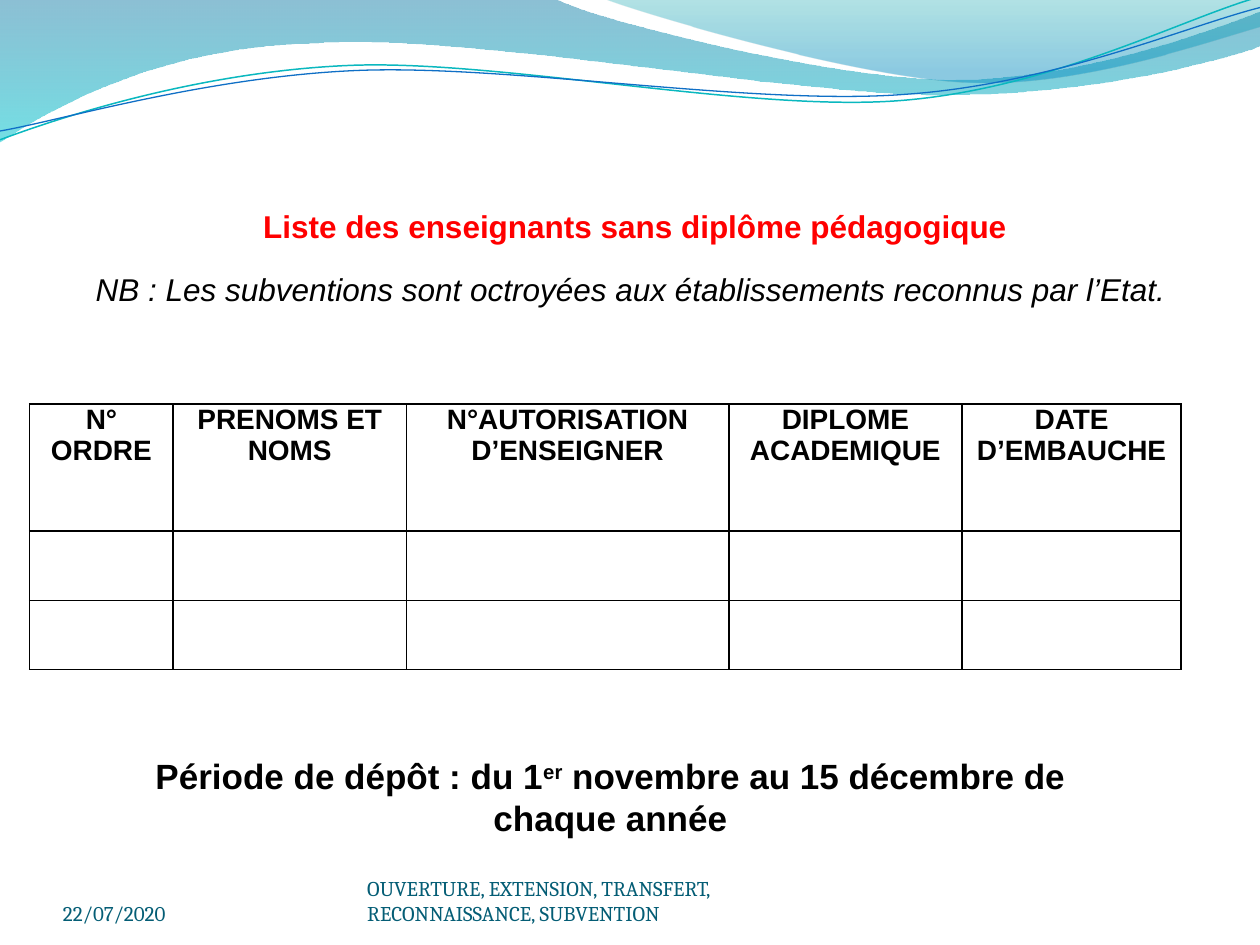
from lxml.etree import SubElement
from pptx import Presentation
from pptx.dml.color import RGBColor as RGB
from pptx.enum.text import MSO_ANCHOR as Anchor, MSO_AUTO_SIZE as AutoSize, PP_ALIGN as Align
from pptx.oxml import parse_xml
from pptx.oxml.ns import nsdecls, qn
from pptx.util import Inches, Pt

COLORS = {
    "text": "000000", "title": "FF0000", "footer": "045D75",
    "deep": "0074A1", "aqua": "00C6CF", "teal": "00A1A9", "sky": "008BBF",
    "teal line": "0AB8BF", "blue line": "0F6FC6",
}

deck = Presentation()
deck.slide_width, deck.slide_height = Inches(10), Inches(7.5)
# The grid has 100 columns and 75 rows of equal size
UNIT = deck.slide_width // 100
page = deck.slides.add_slide(deck.slide_layouts[5])
shapes = page.shapes


def grid(*lengths):
    return [round(length * UNIT) for length in lengths]


def style(para, size, color, font="Arial", bold=False, italic=False):
    for span in para.runs:
        span.font.name, span.font.size = font, Pt(size)
        span.font.bold, span.font.italic = bold, italic
        span.font.color.rgb = RGB.from_string(COLORS[color])


# Header waves: six numbers make a Bezier curve, two make a straight line
waves = [
    {"start": (0, 0), "stops": [(0, "deep", 45), (1, "aqua", 55)], "steps": [
        (44, -0.1), (47.6, 1.7, 66.4, 6.3, 75.8, 6.3), (85.3, 6.3, 95.8, 2.6, 100, 0.9),
        (100.1, 3.6), (98.3, 4.4, 87, 7.6, 74.6, 7.5), (62.2, 7.5, 38.2, 2.8, 25.7, 3.4),
        (12.9, 3.6, 4.6, 8.3, -0.1, 11.3)]},
    {"start": (47.9, -0.1), "stops": [(0, "teal", 30), (0.8, "sky", 45)], "steps": [
        (50.9, 1.1, 68.2, 6.2, 76.9, 6.5), (85.6, 6.9, 96.1, 3.2, 100, 2.1), (100, 0)]},
    {"start": (0, 11.1), "line": ("teal line", 0.85), "steps": [
        (4.8, 9.3, 15.8, 5.7, 27.7, 5.2), (39.5, 4.7, 59.3, 8.9, 71.3, 8),
        (83.3, 7.1, 93.8, 1.5, 99.8, -0.2)]},
    {"start": (0, 10.4), "line": ("blue line", 0.75), "steps": [
        (4.7, 9.6, 16.4, 6.1, 28.3, 5.6), (40.3, 5.1, 59.7, 8.4, 71.7, 7.5),
        (83.6, 6.7, 94.1, 2.1, 100, 0.6)]},
]
for wave in waves:
    points = [grid(*step[i:i + 2]) for step in wave["steps"] for i in range(0, len(step), 2)]
    outline = shapes.build_freeform(*grid(*wave["start"]))
    outline.add_line_segments(points, close="stops" in wave)
    shape = outline.convert_to_shape()
    shape.shadow.inherit = False
    # Join each run of three points into one curve
    segments = iter(list(shape._element.spPr.iter(qn("a:lnTo"))))
    for step in wave["steps"]:
        first = next(segments)
        if len(step) == 6:
            first.tag = qn("a:cubicBezTo")
            for extra in (next(segments), next(segments)):
                first.append(extra[0])
                extra.getparent().remove(extra)
    if "line" in wave:
        color, width = wave["line"]
        shape.fill.background()
        shape.line.color.rgb, shape.line.width = RGB.from_string(COLORS[color]), Pt(width)
        continue
    shape.line.fill.background()
    shape.fill.gradient()
    shape.fill.gradient_angle = 270
    for stop, (position, color, opacity) in zip(shape.fill.gradient_stops, wave["stops"]):
        stop.position = position
        stop.color.rgb = RGB.from_string(COLORS[color])
    colors = shape._element.spPr.iter(qn("a:srgbClr"))
    for node, (position, color, opacity) in zip(colors, wave["stops"]):
        SubElement(node, qn("a:alpha"), val=str(opacity * 1000))

# Title and the note under it
title = shapes.title
title.left, title.top, title.width, title.height = grid(3.9, 15.6, 93, 13.5)
frame = title.text_frame
frame.text = ("Liste des enseignants sans diplôme pédagogique\n"
              "NB : Les subventions sont octroyées aux établissements reconnus par l’Etat. ")
frame.auto_size, frame.vertical_anchor = AutoSize.NONE, Anchor.TOP
frame.margin_top = Inches(0.08)
heading, note = frame.paragraphs
heading.alignment = note.alignment = Align.CENTER
note.space_before = Pt(14.5)
style(heading, 18, "title", bold=True)
style(note, 18, "text", italic=True)

# Table of teachers
headers = ["N° ORDRE", "PRENOMS ET NOMS", "N°AUTORISATION D’ENSEIGNER",
           "DIPLOME ACADEMIQUE", "DATE D’EMBAUCHE"]
columns = [11.4, 18.5, 25.6, 18.5, 17.4]
rows = [10.1, 5.5, 5.5]
table = shapes.add_table(len(rows), len(columns), *grid(2.35, 32.05, sum(columns), sum(rows))).table
table.first_row = table.horz_banding = False
for column, width in zip(table.columns, grid(*columns)):
    column.width = width
for row, height in zip(table.rows, grid(*rows)):
    row.height = height
for cell in table.iter_cells():
    cell.fill.background()
    cell.margin_left = cell.margin_right = Inches(0.07)
    cell.margin_top = cell.margin_bottom = 0
    for index, side in enumerate(("lnL", "lnR", "lnT", "lnB")):
        border = parse_xml(
            f'<a:{side} {nsdecls("a")} w="{Pt(1)}"><a:solidFill>'
            f'<a:srgbClr val="{COLORS["text"]}"/></a:solidFill></a:{side}>')
        cell._tc.get_or_add_tcPr().insert(index, border)
for cell, header in zip(table.rows[0].cells, headers):
    cell.text = header
    para = cell.text_frame.paragraphs[0]
    para.alignment = Align.CENTER
    style(para, 16, "text", bold=True)

# Submission period
box = shapes.add_textbox(*grid(10.15, 59.4, 76.6, 7.7))
box.text_frame.word_wrap = True
para = box.text_frame.paragraphs[0]
para.alignment = Align.CENTER
for words in ("Période de dépôt : du 1", "er", " novembre au 15 décembre de chaque année"):
    para.add_run().text = words
style(para, 20, "text", bold=True)
para.runs[1]._r.get_or_add_rPr().set("baseline", "30000")

# Date and footer
for left, width, words in [
    (5, 23.3, "22/07/2020"),
    (29.15, 36.7, "OUVERTURE, EXTENSION, TRANSFERT, RECONNAISSANCE, SUBVENTION"),
]:
    box = shapes.add_textbox(*grid(left, 69.5, width, 4))
    frame = box.text_frame
    frame.text = words
    frame.word_wrap, frame.vertical_anchor = True, Anchor.BOTTOM
    frame.margin_left = frame.margin_right = frame.margin_top = frame.margin_bottom = 0
    style(frame.paragraphs[0], 12, "footer", font="Cambria")

deck.save("out.pptx")
